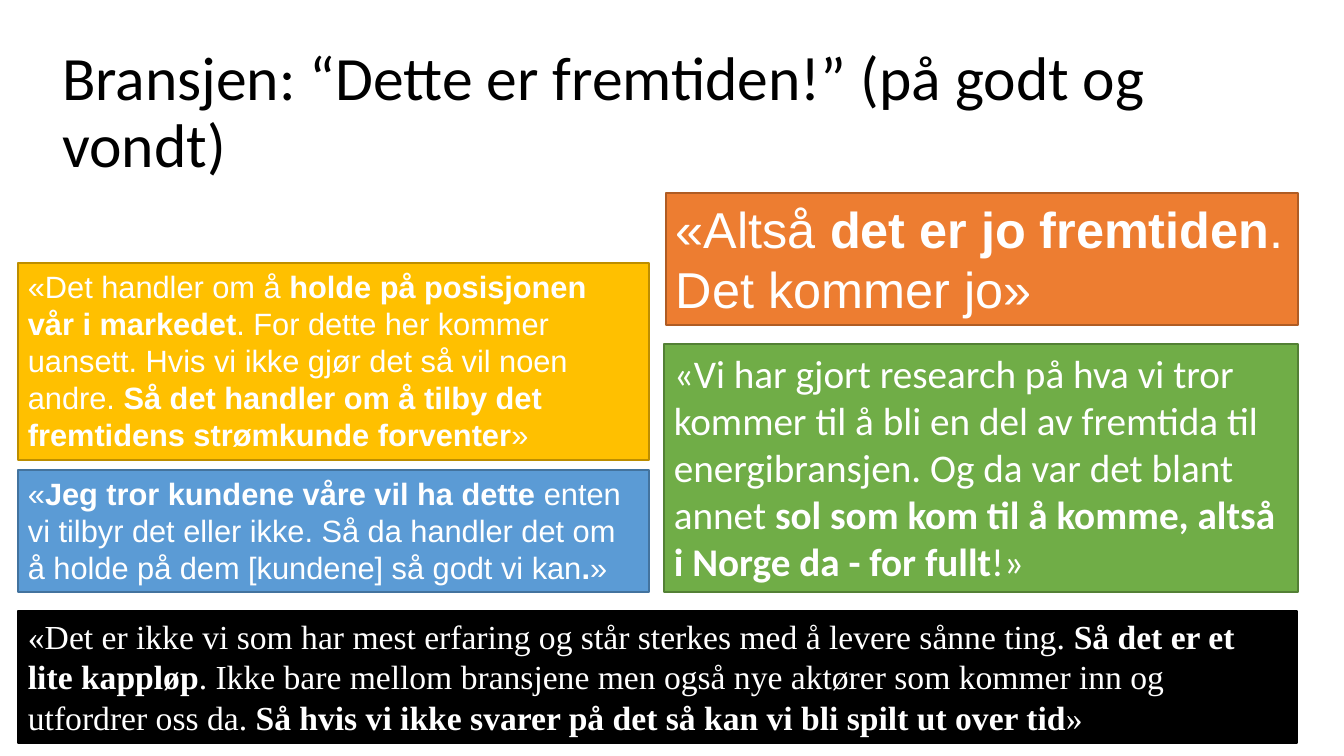
"""Build a slide of interview quotes about the future of the energy industry."""
from dataclasses import dataclass

from pptx import Presentation
from pptx.dml.color import RGBColor
from pptx.enum.shapes import MSO_SHAPE
from pptx.enum.text import MSO_ANCHOR as Anchor, MSO_AUTO_SIZE as AutoSize, PP_ALIGN as Align
from pptx.util import Emu, Pt

PX = 914400 / 100.8


@dataclass(frozen=True)
class Theme:
    """Colours and type sizes of the slide."""
    ink: str = "000000"
    paper: str = "FFFFFF"
    blue: tuple = ("5B9BD5", "43739E")
    black: tuple = ("000000", "000000")
    green: tuple = ("70AD47", "538035")
    orange: tuple = ("ED7D31", "AF5C24")
    yellow: tuple = ("FFC000", "BD8E00")
    title: int = 44
    huge: int = 36
    large: int = 28
    medium: int = 24
    small: int = 22


THEME = Theme()

QUOTES = [
    ((18, 470, 631, 122), THEME.blue, "Arial", THEME.small, [[
        "«", "Jeg tror kundene våre vil ha dette ",
        "enten vi tilbyr det eller ikke. Så da handler det om å holde på dem "
        "[kundene] så godt vi kan", ".", "»"]]),
    ((18, 611, 1279, 132), THEME.black, "Times New Roman", THEME.medium, [[
        "«Det er ikke vi som har mest erfaring og står sterkes med å levere sånne ting. ",
        "Så det er et lite kappløp",
        ". Ikke bare mellom bransjene men også nye aktører som kommer inn og "
        "utfordrer oss da. ",
        "Så hvis vi ikke svarer på det så kan vi bli spilt ut over tid", "»"]]),
    ((664, 344, 634, 248), THEME.green, "Calibri", THEME.large, [[
        "«Vi har gjort research på hva vi tror kommer til å bli en del av fremtida "
        "til energibransjen. Og da var det blant annet ",
        "sol som kom til å komme, altså i Norge da - for fullt", "!»"]]),
    ((666, 193, 632, 132), THEME.orange, "Arial", THEME.huge, [
        ["«Altså ", "det er jo fremtiden", "."], ["Det kommer jo»"]]),
    ((18, 263, 631, 197), THEME.yellow, "Arial", THEME.small, [[
        "«Det handler om å ", "holde på posisjonen vår i markedet",
        ". For dette her kommer uansett. Hvis vi ikke gjør det så vil noen andre. ",
        "Så det handler om å tilby det fremtidens strømkunde forventer", "»"]]),
]


def set_format(target, values):
    """Set each named value as an attribute of the target."""
    for name, value in values.items():
        setattr(target, name, value)


def box_format(box):
    """Turn a box in px into position and size in EMU."""
    return {name: Emu(round(length * PX))
            for name, length in zip(("left", "top", "width", "height"), box)}


class QuoteSlide:
    """Hold the theme and the current slide, and draw its elements."""

    def __init__(self, presentation, theme):
        """Add a title-only slide."""
        self.theme = theme
        self.slide = presentation.slides.add_slide(presentation.slide_layouts[5])

    def add_run(self, paragraph, text, font, size, color, bold=False):
        """Add one formatted run to a paragraph."""
        run = paragraph.add_run()
        run.text = text
        set_format(run.font, {"name": font, "size": Pt(size), "bold": bold})
        run.font.color.rgb = RGBColor.from_string(color)

    def add_title(self, text, box):
        """Move and format the title placeholder."""
        title = self.slide.shapes.title
        set_format(title, box_format(box))
        set_format(title.text_frame, {"vertical_anchor": Anchor.MIDDLE, "word_wrap": True,
                                      "auto_size": AutoSize.NONE})
        paragraph = title.text_frame.paragraphs[0]
        set_format(paragraph, {"alignment": Align.LEFT, "line_spacing": 0.9,
                               "space_before": Pt(0)})
        self.add_run(paragraph, text, "Calibri", self.theme.title, self.theme.ink)

    def add_quote(self, box, colors, font, size, paragraphs):
        """Add a coloured quote box whose runs alternate between plain and bold."""
        shape = self.slide.shapes.add_shape(MSO_SHAPE.RECTANGLE, *box_format(box).values())
        shape.shadow.inherit = False
        fill, line = map(RGBColor.from_string, colors)
        shape.fill.solid()
        shape.fill.fore_color.rgb = fill
        shape.line.color.rgb = line
        shape.line.width = Pt(1)
        frame = shape.text_frame
        set_format(frame, {"word_wrap": True, "vertical_anchor": Anchor.TOP,
                           "auto_size": AutoSize.SHAPE_TO_FIT_TEXT})
        for number, texts in enumerate(paragraphs):
            paragraph = frame.add_paragraph() if number else frame.paragraphs[0]
            paragraph.alignment = Align.LEFT
            for index, text in enumerate(texts):
                self.add_run(paragraph, text, font, size, self.theme.paper, index % 2 == 1)


def main():
    """Build and save the presentation."""
    presentation = Presentation()
    set_format(presentation, {"slide_width": Emu(round(1344 * PX)),
                              "slide_height": Emu(round(756 * PX))})
    slide = QuoteSlide(presentation, THEME)
    slide.add_title("Bransjen: “Dette er fremtiden!” (på godt og vondt)", (52, 41, 1159, 146))
    for quote in QUOTES:
        slide.add_quote(*quote)
    presentation.save("out.pptx")


if __name__ == "__main__":
    main()
